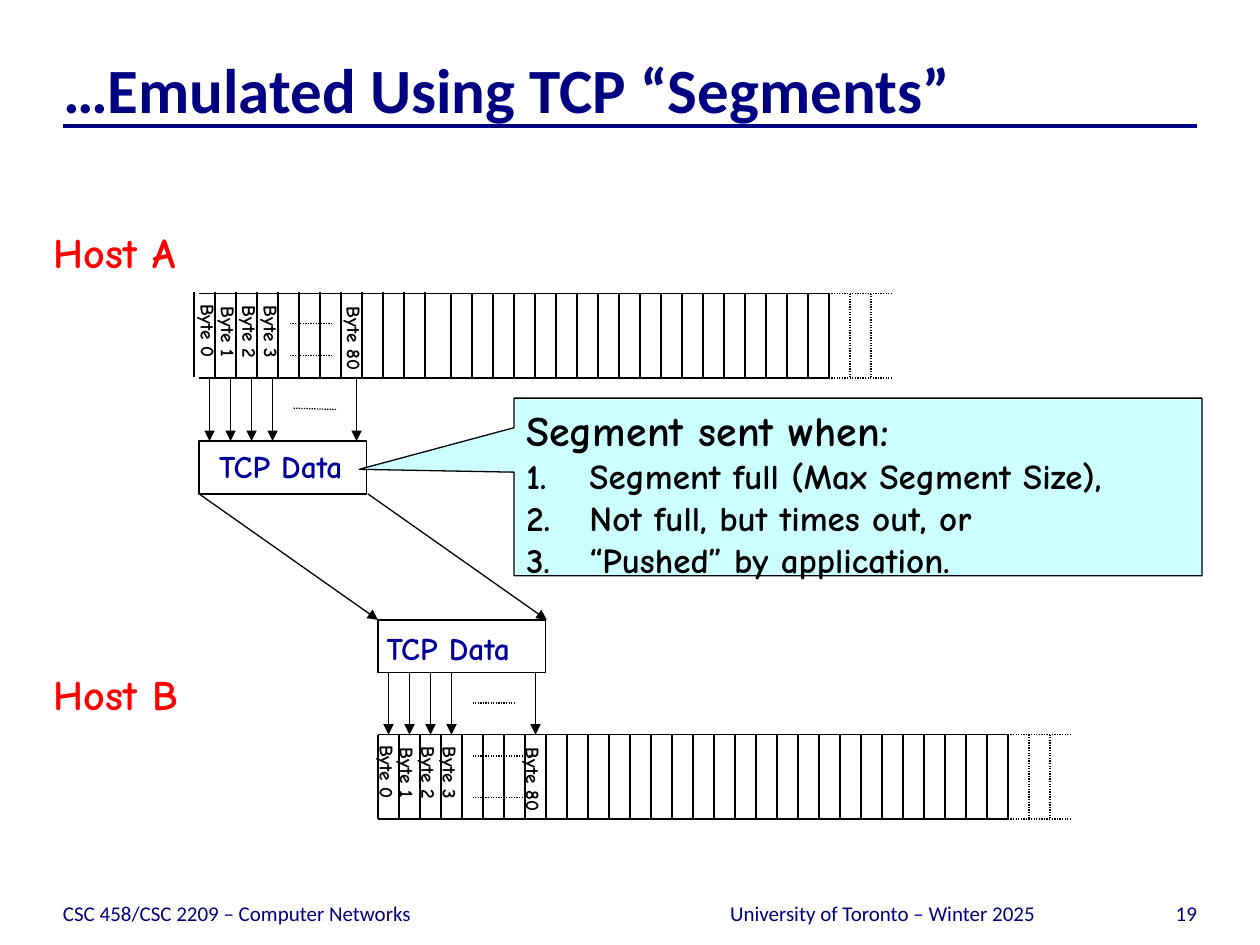
from dataclasses import dataclass

from lxml import etree
from pptx import Presentation
from pptx.dml.color import RGBColor
from pptx.enum.dml import MSO_LINE
from pptx.enum.shapes import MSO_CONNECTOR, MSO_SHAPE
from pptx.enum.text import MSO_ANCHOR, MSO_AUTO_SIZE, PP_ALIGN
from pptx.oxml.ns import qn
from pptx.util import Inches, Pt

STRAIGHT = MSO_CONNECTOR.STRAIGHT
DOTTED = MSO_LINE.ROUND_DOT
RECTANGLE, CALLOUT = MSO_SHAPE.RECTANGLE, MSO_SHAPE.RECTANGULAR_CALLOUT
TOP, BOTTOM = MSO_ANCHOR.TOP, MSO_ANCHOR.BOTTOM
LEFT, CENTER, RIGHT = PP_ALIGN.LEFT, PP_ALIGN.CENTER, PP_ALIGN.RIGHT
FIT_SHAPE, NO_FIT = MSO_AUTO_SIZE.SHAPE_TO_FIT_TEXT, MSO_AUTO_SIZE.NONE


@dataclass(frozen=True)
class Theme:
    heading_font: str = "Calibri"
    drawing_font: str = "Comic Neue"
    title: RGBColor = RGBColor(0x00, 0x00, 0x82)
    footer: RGBColor = RGBColor(0x00, 0x00, 0x7C)
    ink: RGBColor = RGBColor(0x00, 0x00, 0x00)
    host: RGBColor = RGBColor(0xFF, 0x00, 0x00)
    data: RGBColor = RGBColor(0x00, 0x00, 0x99)
    paper: RGBColor = RGBColor(0xFF, 0xFF, 0xFF)
    callout: RGBColor = RGBColor(0xCC, 0xFF, 0xFF)
    title_size: Pt = Pt(36)
    large_size: Pt = Pt(24)
    list_size: Pt = Pt(20)
    data_size: Pt = Pt(18)
    footer_size: Pt = Pt(12)
    byte_size: Pt = Pt(11)
    thin: Pt = Pt(0.75)
    rule: Pt = Pt(2.25)


theme = Theme()

presentation = Presentation()
presentation.slide_width, presentation.slide_height = Inches(10), Inches(7.5)
slide = presentation.slides.add_slide(presentation.slide_layouts[5])
shapes = slide.shapes


def add_line(x1, y1, x2, y2, dotted=False, arrow=False, color=theme.ink, width=theme.thin):
    line = shapes.add_connector(STRAIGHT, Inches(x1), Inches(y1), Inches(x2), Inches(y2))
    line.line.color.rgb = color
    line.line.width = width
    if dotted:
        line.line.dash_style = DOTTED
    if arrow:
        etree.SubElement(line.line._get_or_add_ln(), qn("a:tailEnd"), type="triangle")
    etree.SubElement(line._element.spPr, qn("a:effectLst"))


def add_label(text, left, top, width, height, size, color, rotation=0):
    box = shapes.add_textbox(Inches(left), Inches(top), Inches(width), Inches(height))
    box.rotation = rotation
    frame = box.text_frame
    frame.word_wrap = False
    frame.auto_size = FIT_SHAPE
    frame.text = text
    font = frame.paragraphs[0].font
    font.name, font.size, font.bold = theme.drawing_font, size, True
    font.color.rgb = color


# Title and rule
add_line(0.5, 1, 9.5, 1, color=theme.title, width=theme.rule)
title = shapes.title
title.left, title.top, title.width, title.height = Inches(0.5), Inches(0.33), Inches(9), Inches(0.67)
frame = title.text_frame
frame.text = "…Emulated Using TCP “Segments”"
frame.vertical_anchor, frame.auto_size = BOTTOM, NO_FIT
frame.margin_left = frame.margin_right = frame.margin_bottom = 0
frame.margin_top = Inches(0.05)
paragraph = frame.paragraphs[0]
paragraph.alignment = LEFT
paragraph.font.name, paragraph.font.size, paragraph.font.bold = theme.heading_font, theme.title_size, True
paragraph.font.color.rgb = theme.title

# Footer
for text, left, width, alignment in (
    ("CSC 458/CSC 2209 – Computer Networks", 0.5, 4.83, LEFT),
    ("University of Toronto – Winter 2025", 5.42, 3.17, CENTER),
    ("19", 8.67, 0.83, RIGHT),
):
    frame = shapes.add_textbox(Inches(left), Inches(6.95), Inches(width), Inches(0.4)).text_frame
    frame.word_wrap, frame.vertical_anchor = True, BOTTOM
    frame.margin_left = frame.margin_right = frame.margin_top = frame.margin_bottom = 0
    frame.text = text
    paragraph = frame.paragraphs[0]
    paragraph.alignment = alignment
    paragraph.font.name, paragraph.font.size = theme.heading_font, theme.footer_size
    paragraph.font.color.rgb = theme.footer

# Byte streams: rails, cell dividers and byte names
CELL = 1 / 6
STREAM_HEIGHT = 0.67
STREAM_CELLS = 30
BYTE_NAMES = (  # name, centre offset from the stream's corner, box width
    ("Byte 0", 0.07, 0.31, 0.65),
    ("Byte 1", 0.23, 0.31, 0.61),
    ("Byte 2", 0.4, 0.32, 0.64),
    ("Byte 3", 0.57, 0.32, 0.64),
    ("Byte 80", 1.23, 0.38, 0.75),
)
for host, host_top, stream_left, stream_top, shifted_lines in (
    ("Host A", 1.75, 1.58, 2.33, 12),
    ("Host B", 5.26, 3, 5.83, 0),
):
    add_label(host, 0.33, host_top, 1.22, 0.5, theme.large_size, theme.host)
    stream_right = stream_left + STREAM_CELLS * CELL
    for y in (stream_top, stream_top + STREAM_HEIGHT):
        add_line(stream_left, y, stream_right, y)
        add_line(stream_right + 0.5, y, stream_right, y, dotted=True)
    for index in range(STREAM_CELLS + 3):
        shift_x, shift_y = (0.04, 0.01) if index < shifted_lines else (0, 0)
        x, y = stream_left + index * CELL - shift_x, stream_top - shift_y
        add_line(x, y, x, y + STREAM_HEIGHT, dotted=index > STREAM_CELLS)
    for name, center_x, center_y, width in BYTE_NAMES:
        add_label(name, stream_left + center_x - width / 2, stream_top + center_y - 0.145,
                  width, 0.29, theme.byte_size, theme.ink, rotation=89.8)

# Dotted continuation marks
for x1, y1, x2, y2 in (
    (2.3, 2.57, 2.63, 2.57), (2.3, 2.82, 2.63, 2.82), (2.33, 3.24, 2.67, 3.25),
    (3.75, 5.58, 4.08, 5.58), (3.75, 6, 4.25, 6), (3.75, 6.33, 4.25, 6.33),
):
    add_line(x1, y1, x2, y2, dotted=True)

# TCP segments with their byte arrows
for left, top, text_left, text_top, arrow_top in (
    (1.58, 3.5, 1.64, 3.5, 3),
    (3, 4.92, 2.97, 4.94, 5.33),
):
    segment = shapes.add_shape(RECTANGLE, Inches(left), Inches(top), Inches(1.33), Inches(0.42))
    segment.shadow.inherit = False
    segment.fill.solid()
    segment.fill.fore_color.rgb = theme.paper
    segment.line.color.rgb = theme.ink
    segment.line.width = theme.thin
    add_label("TCP Data", text_left, text_top, 1.32, 0.4, theme.data_size, theme.data)
    for cell in (0, 1, 2, 3, 7):
        x = left + (cell + 0.5) * CELL
        add_line(x, arrow_top, x, arrow_top + 0.5, arrow=True)

# Transfer from host A to host B
for x in (1.58, 2.92):
    add_line(x, 3.92, x + 1.42, 4.92, arrow=True)

# Callout with numbered conditions
callout = shapes.add_shape(CALLOUT, Inches(4.08), Inches(3.16), Inches(5.46), Inches(1.41))
callout.adjustments[0], callout.adjustments[1] = -0.725, -0.099
callout.shadow.inherit = False
callout.fill.solid()
callout.fill.fore_color.rgb = theme.callout
callout.line.color.rgb = theme.ink
callout.line.width = theme.thin
frame = callout.text_frame
frame.word_wrap, frame.vertical_anchor = True, TOP
frame.text = "\n".join((
    "Segment sent when:",
    "Segment full (Max Segment Size),",
    "Not full, but times out, or",
    "“Pushed” by application.",
))
for index, paragraph in enumerate(frame.paragraphs):
    paragraph.alignment = LEFT
    font = paragraph.font
    font.name, font.bold = theme.drawing_font, True
    font.size = theme.list_size if index else theme.large_size
    font.color.rgb = theme.ink
    properties = paragraph._p.get_or_add_pPr()
    properties.set("marL", str(Inches(0.5)))
    properties.set("indent", str(Inches(-0.5)))
    if index:
        numbering = etree.Element(qn("a:buAutoNum"), type="arabicPeriod")
        properties.insert(0, numbering)

presentation.save("out.pptx")
